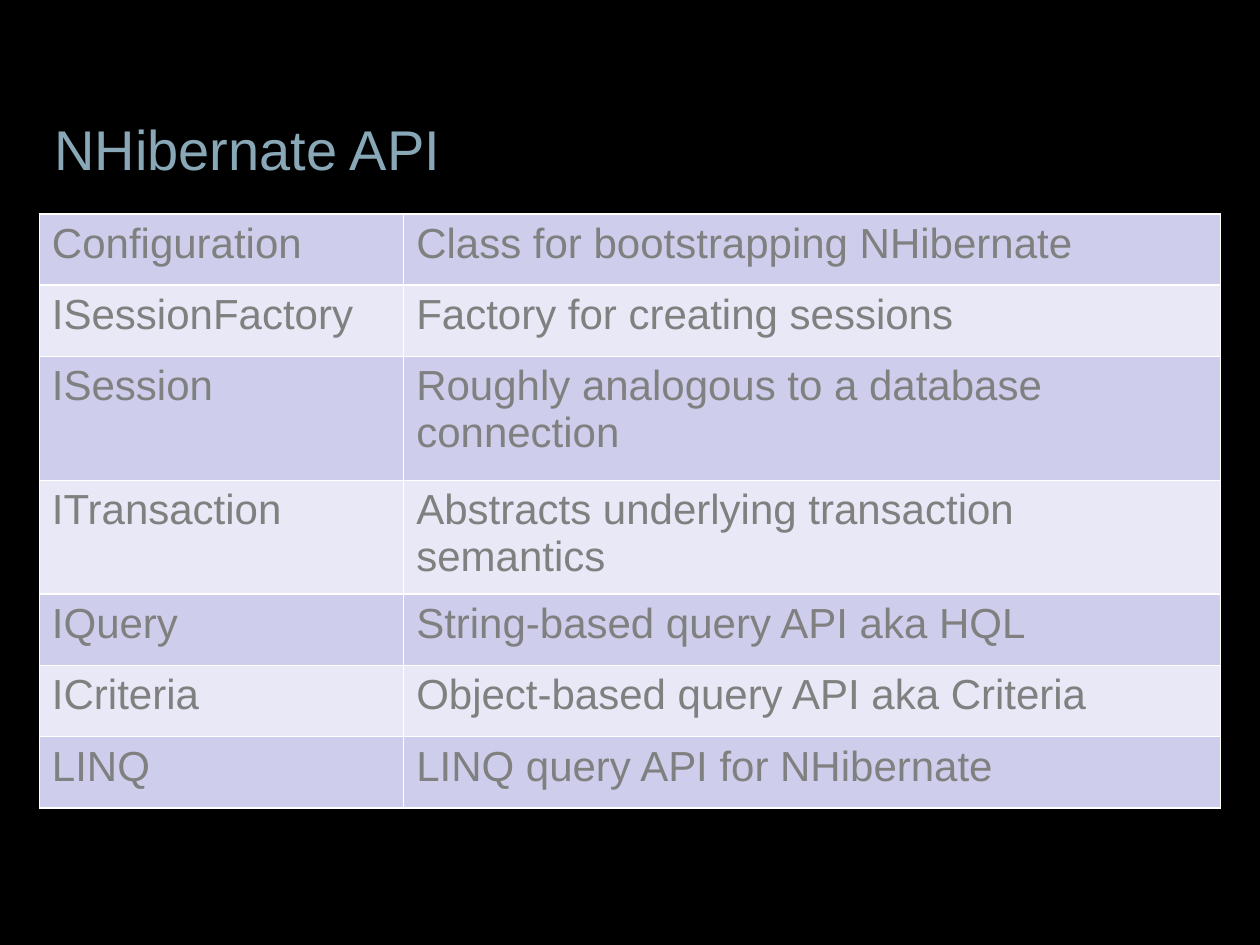
from lxml.etree import SubElement
from pptx import Presentation
from pptx.dml.color import RGBColor
from pptx.enum.text import MSO_ANCHOR
from pptx.oxml.ns import qn
from pptx.util import Pt

TITLE = "NHibernate API"
ROWS = [
    ("Configuration", "Class for bootstrapping NHibernate", 40.6),
    ("ISessionFactory", "Factory for creating sessions", 40.8),
    ("ISession", "Roughly analogous to a database connection", 70.8),
    ("ITransaction", "Abstracts underlying transaction semantics", 40),
    ("IQuery", "String-based query API aka HQL", 40.8),
    ("ICriteria", "Object-based query API aka Criteria", 40.8),
    ("LINQ", "LINQ query API for NHibernate", 40.8),
]
COLUMN_WIDTHS = [208.2, 466.8]
BAND_FILLS = ["CECEEC", "E8E8F6"]
BORDER = "FFFFFF"


def set_color(color_format, value):
    color_format.rgb = RGBColor.from_string(value)


def set_fill(fill, value):
    fill.solid()
    set_color(fill.fore_color, value)


def write_text(text_frame, text, size, color):
    text_frame.text = text
    font = text_frame.paragraphs[0].runs[0].font
    font.name = "Arial"
    font.size = Pt(size)
    set_color(font.color, color)


def add_borders(cell):
    properties = cell._tc.get_or_add_tcPr()
    for position, side in enumerate(("a:lnL", "a:lnR", "a:lnT", "a:lnB")):
        line = properties.makeelement(qn(side), {"w": str(Pt(1))})
        properties.insert(position, line)
        solid = SubElement(line, qn("a:solidFill"))
        SubElement(solid, qn("a:srgbClr"), val=BORDER)


def add_title(slide):
    box = slide.shapes.add_textbox(Pt(24), Pt(66.5), Pt(612), Pt(36))
    box.text_frame.word_wrap = True
    box.text_frame.vertical_anchor = MSO_ANCHOR.MIDDLE
    write_text(box.text_frame, TITLE, 32, "89A8B7")


def add_api_table(slide):
    height = sum(row[-1] for row in ROWS)
    frame = slide.shapes.add_table(
        len(ROWS), len(COLUMN_WIDTHS), Pt(22.5), Pt(122.4), Pt(sum(COLUMN_WIDTHS)), Pt(height)
    )
    table = frame.table
    for column, width in zip(table.columns, COLUMN_WIDTHS):
        column.width = Pt(width)
    for index, (name, description, row_height) in enumerate(ROWS):
        table.rows[index].height = Pt(row_height)
        for cell, text in zip(table.rows[index].cells, (name, description)):
            set_fill(cell.fill, BAND_FILLS[index % 2])
            add_borders(cell)
            write_text(cell.text_frame, text, 24, "808080")


def main():
    presentation = Presentation()
    presentation.slide_width, presentation.slide_height = Pt(720), Pt(540)
    slide = presentation.slides.add_slide(presentation.slide_layouts[6])
    set_fill(slide.background.fill, "000000")
    add_title(slide)
    add_api_table(slide)
    presentation.save("out.pptx")


if __name__ == "__main__":
    main()
